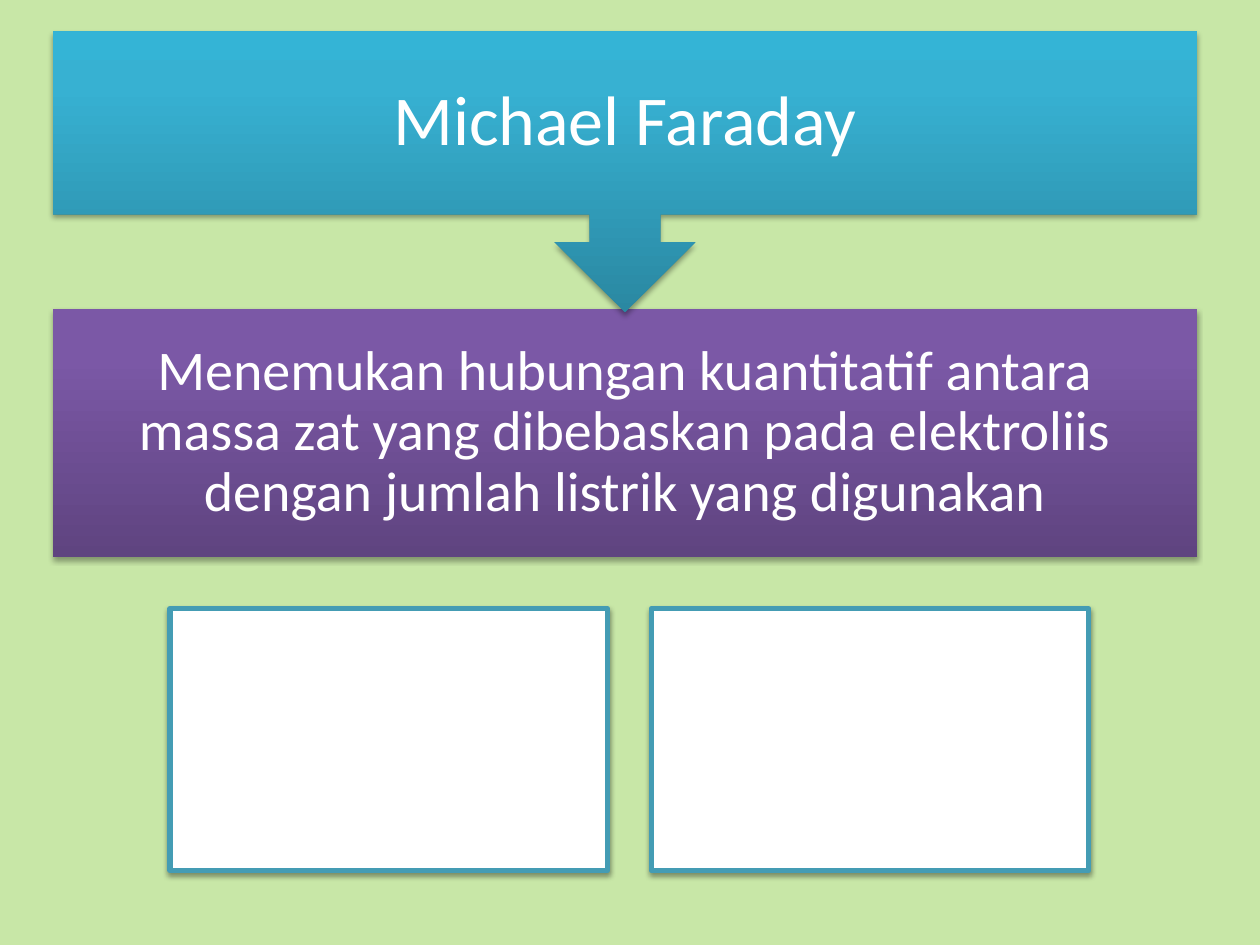
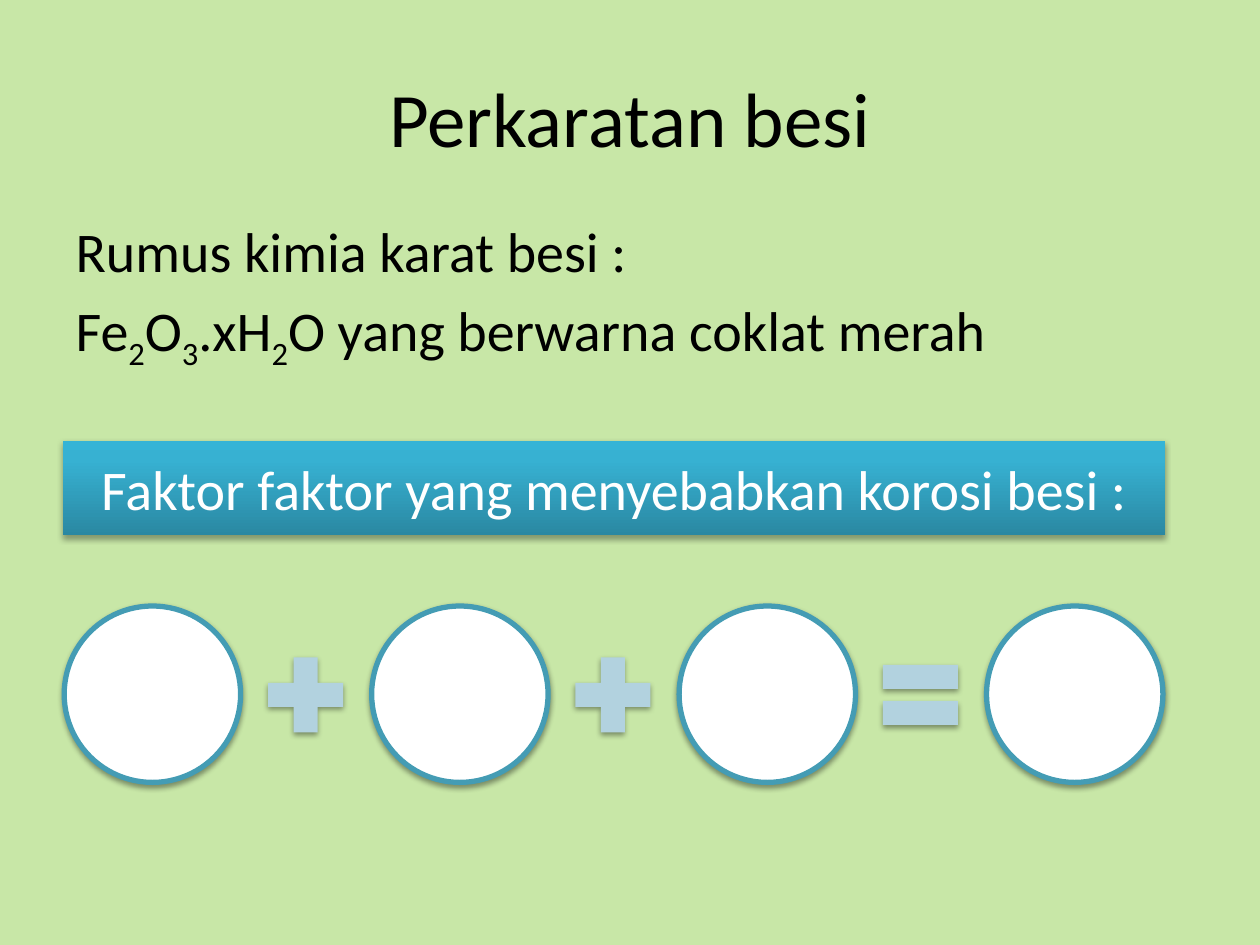
"""Build two chemistry slides: Michael Faraday and the rusting of iron."""
from copy import deepcopy
from lxml import etree
from pptx import Presentation
from pptx.dml.color import RGBColor
from pptx.enum.shapes import MSO_SHAPE
from pptx.enum.text import MSO_ANCHOR, PP_ALIGN
from pptx.oxml.ns import qn
from pptx.util import Inches, Pt

RECT, OVAL = MSO_SHAPE.RECTANGLE, MSO_SHAPE.OVAL
CALLOUT = MSO_SHAPE.DOWN_ARROW_CALLOUT
PLUS, EQUAL = MSO_SHAPE.MATH_PLUS, MSO_SHAPE.MATH_EQUAL
MIDDLE, CENTER = MSO_ANCHOR.MIDDLE, PP_ALIGN.CENTER

GREEN = RGBColor(0xC8, 0xE7, 0xA7)
WHITE = RGBColor(0xFF, 0xFF, 0xFF)
BLACK = RGBColor(0x00, 0x00, 0x00)
TEAL = RGBColor(0x44, 0x9C, 0xB4)
PALE = RGBColor(0xB2, 0xD2, 0xDF)
BLUES = [RGBColor(0x2A, 0x88, 0xA2), RGBColor(0x37, 0xB1, 0xD2), RGBColor(0x34, 0xB4, 0xD6)]
PURPLES = [RGBColor(0x5F, 0x44, 0x80), RGBColor(0x7B, 0x58, 0xA6), RGBColor(0x7C, 0x57, 0xA8)]
STOPS = [0, 0.8, 1]
FONT = "Calibri"


def add_shape(slide, kind, box, fill, line=None):
    """Add a shadowed shape; a list of colours makes a gradient."""
    shape = slide.shapes.add_shape(kind, *[Inches(n) for n in box])
    blend = isinstance(fill, list)
    if blend:
        shape.fill.gradient()
        shape.fill.gradient_angle = 90
        grid = shape._element.spPr.find(".//" + qn("a:gsLst"))
        grid.append(deepcopy(grid[-1]))
        for stop, place, tint in zip(shape.fill.gradient_stops, STOPS, fill):
            stop.position = place
            stop.color.rgb = tint
    else:
        shape.fill.solid()
        shape.fill.fore_color.rgb = fill
    if line:
        shape.line.color.rgb = line
        shape.line.width = Pt(3)
    else:
        shape.line.fill.background()
    shape.shadow.inherit = False
    effects = shape._element.spPr.find(qn("a:effectLst"))
    shade = etree.SubElement(effects, qn("a:outerShdw"), blurRad="40000",
                             dist="23000" if blend else "20000", dir="5400000", rotWithShape="0")
    black = etree.SubElement(shade, qn("a:srgbClr"), val="000000")
    etree.SubElement(black, qn("a:alpha"), val="35000" if blend else "38000")
    return shape


def set_text(shape, text, size, color, inset=None, pace=None):
    """Write one centred paragraph in a shape or title."""
    frame = shape.text_frame
    frame.text = text
    frame.word_wrap = True
    frame.vertical_anchor = MIDDLE
    if inset:
        for side in ("left", "top", "right", "bottom"):
            setattr(frame, f"margin_{side}", Inches(inset))
    para = frame.paragraphs[0]
    para.alignment = CENTER
    if pace:
        para.line_spacing = pace
    style = {"name": FONT, "size": Pt(size)}
    for key, value in style.items():
        setattr(para.runs[0].font, key, value)
    para.runs[0].font.color.rgb = color


deck = Presentation()
deck.slide_width, deck.slide_height = Inches(10), Inches(7.5)
first = deck.slides.add_slide(deck.slide_layouts[6])
second = deck.slides.add_slide(deck.slide_layouts[1])
for slide in (first, second):
    slide.background.fill.solid()
    slide.background.fill.fore_color.rgb = GREEN

finding = add_shape(first, RECT, (0.42, 2.45, 9.08, 1.97), PURPLES)
set_text(finding, "Menemukan hubungan kuantitatif antara massa zat yang dibebaskan "
         "pada elektroliis dengan jumlah listrik yang digunakan", 32, WHITE, 0.25, 0.9)
person = add_shape(first, CALLOUT, (0.42, 0.25, 9.08, 2.23), BLUES)
set_text(person, "Michael Faraday", 40, WHITE, 0.31, 0.9)
for left in (1.35, 5.17):
    add_shape(first, RECT, (left, 4.83, 3.47, 2.08), WHITE, TEAL)

title, body = second.placeholders
places = [(title, (0.5, 0.3, 9, 1.25)), (body, (0.5, 1.67, 9, 1.42))]
for holder, box in places:
    for key, value in zip(("left", "top", "width", "height"), box):
        setattr(holder, key, Inches(value))
set_text(title, "Perkaratan besi", 44, BLACK)

lines = [["Rumus kimia karat besi :"],
         ["Fe", "2", "O", "3", ".xH", "2", "O yang berwarna coklat merah"]]
frame = body.text_frame
for row, parts in enumerate(lines):
    para = frame.add_paragraph() if row else frame.paragraphs[0]
    props = para._p.get_or_add_pPr()
    props.set("marL", "0")
    props.set("indent", "0")
    etree.SubElement(props, qn("a:buNone"))
    for part in parts:
        run = para.add_run()
        run.text = part
        run.font.name, run.font.size = FONT, Pt(32)
        run.font.color.rgb = BLACK
        if part.isdigit():
            run._r.get_or_add_rPr().set("baseline", "-25000")

banner = add_shape(second, RECT, (0.5, 3.5, 8.75, 0.75), BLUES)
set_text(banner, "Faktor faktor yang menyebabkan korosi besi :", 32, WHITE)

for spot, sign in enumerate((PLUS, PLUS, EQUAL, None)):
    left = 0.51 + spot * 2.44
    add_shape(second, OVAL, (left, 4.81, 1.4, 1.4), WHITE, TEAL)
    if sign:
        add_shape(second, sign, (left + 1.51, 5.11, 0.81, 0.81), PALE)

deck.save("out.pptx")
